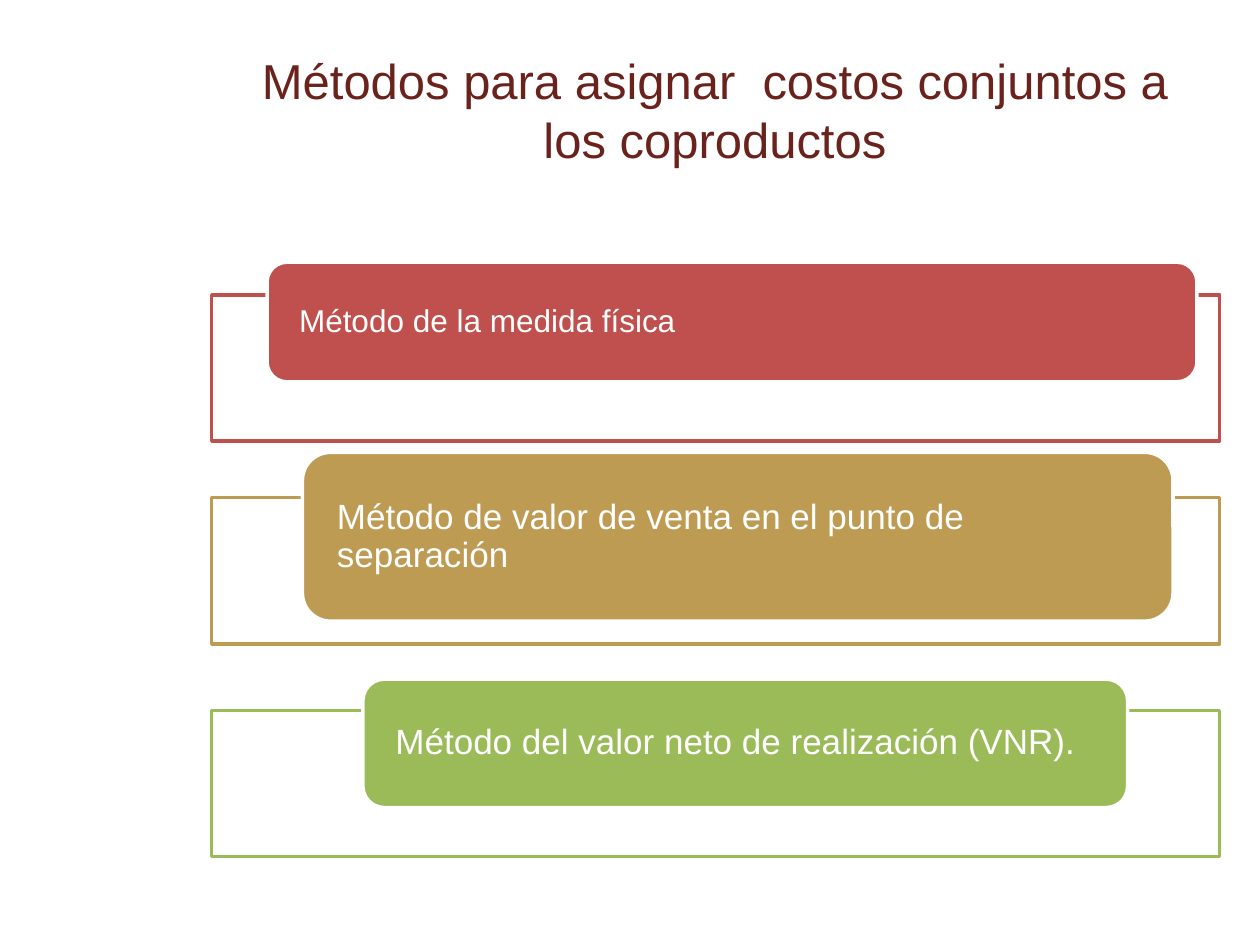
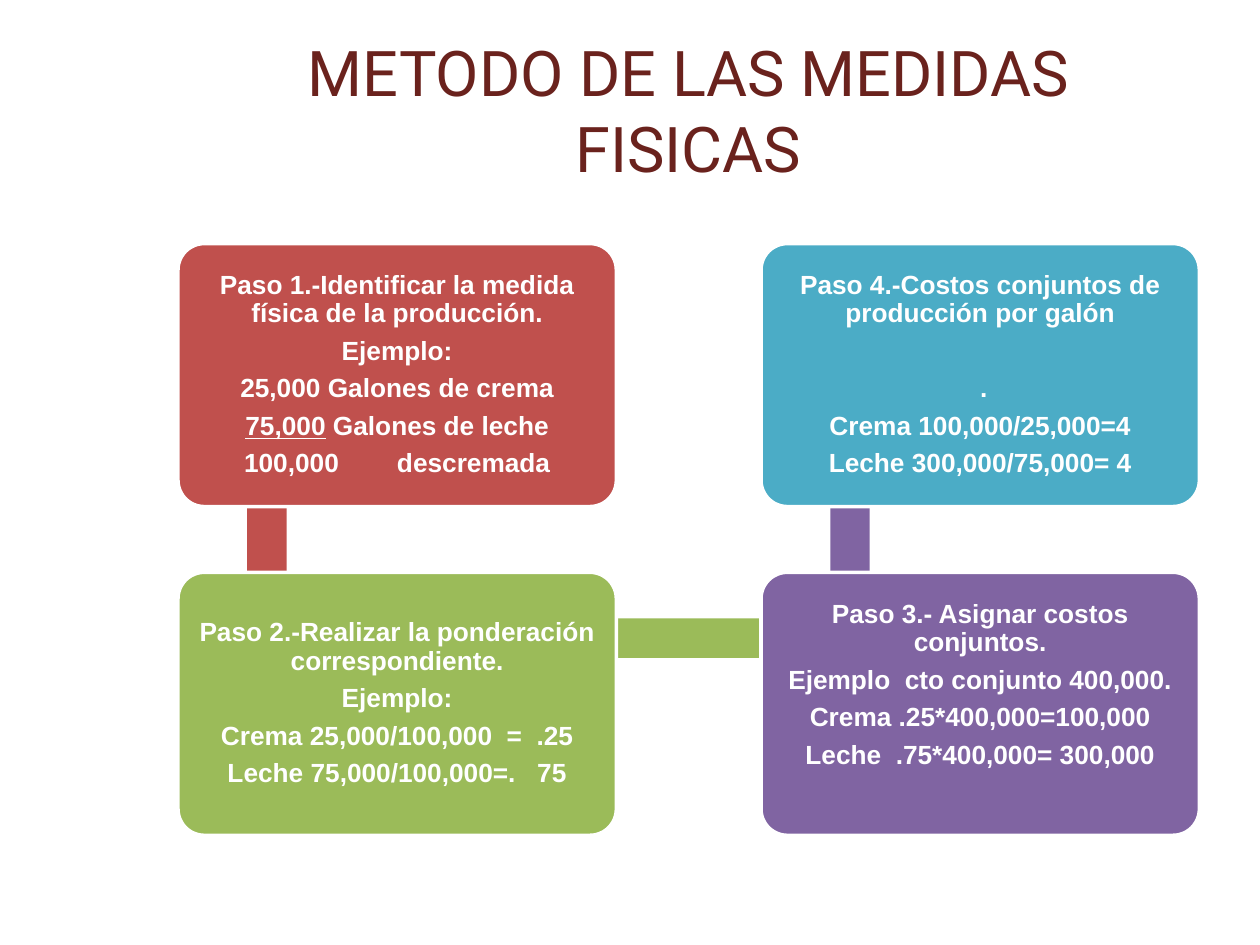
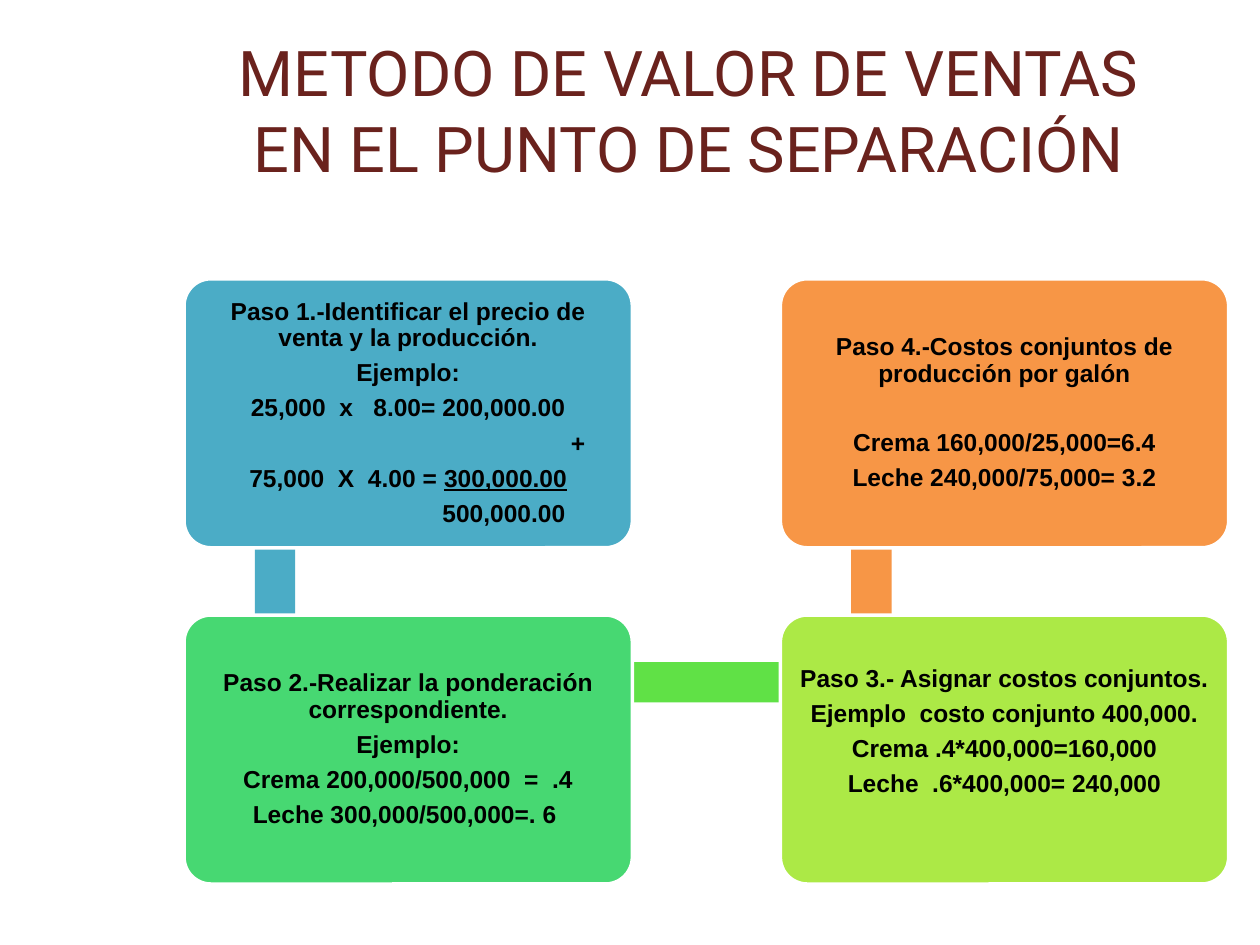
from dataclasses import dataclass

from lxml.etree import SubElement
from pptx import Presentation
from pptx.dml.color import RGBColor
from pptx.enum.shapes import MSO_SHAPE
from pptx.enum.text import MSO_ANCHOR, PP_ALIGN
from pptx.oxml.ns import qn
from pptx.util import Pt


@dataclass(frozen=True)
class Theme:
    title_color: str = "6A221D"
    white: str = "FFFFFF"
    black: str = "000000"
    red: str = "C0504D"
    tan: str = "BD9B53"
    olive: str = "9BBB59"
    purple: str = "8064A2"
    teal: str = "4BACC6"
    orange: str = "F79646"
    green: str = "47D872"
    bright_green: str = "60E146"
    lime: str = "ACE946"
    body_font: str = "Arial"
    heading_font: str = "Roboto"
    list_title_size: float = 28
    heading_size: float = 36
    border: float = 2
    line_spacing: float = 0.9
    space_after: float = 0.35


@dataclass(frozen=True)
class Line:
    text: str
    underlined: str = ""
    skip: bool = False
    indent: float = 0
    tab: float = 0


class Deck:
    def __init__(self, theme):
        self.theme = theme
        self.presentation = Presentation()
        self.presentation.slide_width = Pt(720)
        self.presentation.slide_height = Pt(540)
        self.slide = None

    def new_slide(self):
        self.slide = self.presentation.slides.add_slide(self.presentation.slide_layouts[6])

    def style(self, font, name, size, color, bold=False):
        font.name = name
        font.size = Pt(size)
        font.bold = bold
        font.color.rgb = RGBColor.from_string(color)

    def title(self, text, left, font_name, size, spacing=None):
        box = self.slide.shapes.add_textbox(Pt(left), Pt(17.5), Pt(551), Pt(90))
        frame = box.text_frame
        frame.word_wrap = True
        frame.vertical_anchor = MSO_ANCHOR.MIDDLE
        heading = frame.paragraphs[0]
        heading.text = text
        heading.alignment = PP_ALIGN.CENTER
        if spacing:
            heading.line_spacing = Pt(spacing)
        self.style(heading.font, font_name, size, self.theme.title_color)

    def block(self, preset, left, top, width, height, fill, line=None):
        shape = self.slide.shapes.add_shape(preset, Pt(left), Pt(top), Pt(width), Pt(height))
        shape.shadow.inherit = False
        shape.fill.solid()
        shape.fill.fore_color.rgb = RGBColor.from_string(fill)
        if line:
            shape.line.color.rgb = RGBColor.from_string(line)
            shape.line.width = Pt(self.theme.border)
        else:
            shape.line.fill.background()
        return shape

    def frame(self, top, color):
        outline = self.block(MSO_SHAPE.RECTANGLE, 121, top, 576, 83.5, self.theme.white, color)
        white = outline.fill._xPr.find(qn("a:solidFill"))[0]
        SubElement(white, qn("a:alpha"), val="90000")

    def card(self, left, top, width, height, fill, lines, size, color, insets,
             bold=False, align=PP_ALIGN.CENTER, rounding=None):
        card = self.block(MSO_SHAPE.ROUNDED_RECTANGLE, left, top, width, height,
                          fill, self.theme.white)
        if rounding:
            card.adjustments[0] = rounding
        content = card.text_frame
        content.word_wrap = True
        content.vertical_anchor = MSO_ANCHOR.MIDDLE
        side, above, below = insets
        content.margin_left = content.margin_right = Pt(side)
        content.margin_top, content.margin_bottom = Pt(above), Pt(below)
        for index, line in enumerate(lines):
            paragraph = content.paragraphs[0] if index == 0 else content.add_paragraph()
            self.fill_line(paragraph, line, size, align)
            self.style(paragraph.font, self.theme.body_font, size, color, bold)

    def blank_line(self, size):
        return round(size * 1.42, 2)

    def fill_line(self, paragraph, line, size, align):
        before, marked, after = (line.text.partition(line.underlined)
                                 if line.underlined else (line.text, "", ""))
        for text in filter(None, (before, marked, after)):
            run = paragraph.add_run()
            run.text = text
            if text == marked:
                run.font.underline = True
        paragraph.alignment = PP_ALIGN.LEFT if line.indent else align
        paragraph.line_spacing = self.theme.line_spacing
        paragraph.space_after = Pt(size * self.theme.space_after)
        if line.skip:
            paragraph.space_before = Pt(self.blank_line(size))
        properties = paragraph._p.get_or_add_pPr()
        if line.indent:
            properties.set("marL", str(Pt(line.indent)))
        if line.tab:
            stops = SubElement(properties, qn("a:tabLst"))
            SubElement(stops, qn("a:tab"), pos=str(Pt(line.tab)), algn="l")

    def step_cycle(self, left, top, width, steps, rail_colors, size, color):
        height = width * 0.6
        right, lower = left + width * 1.33, top + width * 0.75
        thickness = width * 0.09
        rail_x, rail_y = width * 0.203, height * 0.25
        across, down = right - left - 1.5, lower - top - 1.5
        places = [(left, top), (left, lower), (right, lower), (right, top)]
        rails = [
            (left + rail_x - thickness / 2, top + rail_y + 0.75, thickness, down),
            (left + rail_x, lower + rail_y - thickness / 2, across, thickness),
            (right + rail_x - thickness / 2, top + rail_y + 0.75, thickness, down),
        ]
        for index, ((x, y), (fill, lines, ends_blank)) in enumerate(zip(places, steps)):
            if index < len(rails):
                self.block(MSO_SHAPE.RECTANGLE, *rails[index], rail_colors[index])
            below = 4.5 + (self.blank_line(size) if ends_blank else 0)
            self.card(x, y, width, height, fill, lines, size, color,
                      (4.5, 4.5, below), bold=True, rounding=0.1)


def methods_slide(deck):
    theme = deck.theme
    deck.new_slide()
    deck.title("Métodos para asignar  costos conjuntos a los coproductos", 133,
               theme.body_font, theme.list_title_size, 33.7)
    methods = [
        (168.5, theme.red, 152.6, 149.8, 531.4, 68.4, 18, "Método de la medida física"),
        (284.4, theme.tan, 172.8, 258.5, 497.5, 96.5, 20,
         "Método de valor de venta en el punto de separación"),
        (406.1, theme.olive, 207.4, 388.1, 437, 73.4, 20,
         "Método del valor neto de realización (VNR)."),
    ]
    for frame_top, color, left, top, width, height, size, method in methods:
        deck.frame(frame_top, color)
        deck.card(left, top, width, height, color, [Line(method)], size, theme.white,
                  (15, 0, 0), align=PP_ALIGN.LEFT)


def physical_measures_slide(deck):
    theme = deck.theme
    deck.new_slide()
    deck.title("METODO DE LAS MEDIDAS FISICAS", 118, theme.heading_font, theme.heading_size)
    steps = [
        (theme.red, [
            Line("Paso 1.-Identificar la medida física de la producción."),
            Line("Ejemplo:"),
            Line("25,000 Galones de crema"),
            Line("75,000 Galones de leche", underlined="75,000"),
            Line("100,000\tdescremada", tab=87.4),
        ], False),
        (theme.olive, [
            Line("Paso 2.-Realizar la ponderación correspondiente."),
            Line("Ejemplo:"),
            Line("Crema 25,000/100,000  =  .25"),
            Line("Leche 75,000/100,000=.   75"),
        ], False),
        (theme.purple, [
            Line("Paso 3.- Asignar costos conjuntos."),
            Line("Ejemplo  cto conjunto 400,000."),
            Line("Crema .25*400,000=100,000"),
            Line("Leche  .75*400,000= 300,000"),
        ], True),
        (theme.teal, [
            Line("Paso 4.-Costos conjuntos de producción por galón"),
            Line(" .", skip=True),
            Line("Crema 100,000/25,000=4"),
            Line("Leche 300,000/75,000= 4"),
        ], False),
    ]
    deck.step_cycle(101.7, 139.2, 250.5, steps, (theme.red, theme.olive, theme.purple),
                    15, theme.white)


def sales_value_slide(deck):
    theme = deck.theme
    deck.new_slide()
    deck.title("METODO DE VALOR DE VENTAS EN EL PUNTO DE SEPARACIÓN", 118,
               theme.heading_font, theme.heading_size)
    steps = [
        (theme.teal, [
            Line("Paso 1.-Identificar el precio de venta y la producción."),
            Line("Ejemplo:"),
            Line("25,000  x   8.00= 200,000.00"),
            Line("+", indent=212),
            Line("75,000  X  4.00 = 300,000.00", underlined="300,000.00"),
            Line("500,000.00", indent=138.7),
        ], False),
        (theme.green, [
            Line("Paso 2.-Realizar la ponderación correspondiente."),
            Line("Ejemplo:"),
            Line("Crema 200,000/500,000  =  .4"),
            Line("Leche 300,000/500,000=. 6 "),
        ], False),
        (theme.lime, [
            Line("Paso 3.- Asignar costos conjuntos."),
            Line("Ejemplo  costo conjunto 400,000."),
            Line("Crema .4*400,000=160,000"),
            Line("Leche  .6*400,000= 240,000"),
        ], True),
        (theme.orange, [
            Line("Paso 4.-Costos conjuntos de producción por galón"),
            Line("Crema 160,000/25,000=6.4", skip=True),
            Line("Leche 240,000/75,000= 3.2"),
        ], False),
    ]
    deck.step_cycle(105.2, 159.3, 256.2, steps,
                    (theme.teal, theme.bright_green, theme.orange), 14, theme.black)


def main():
    deck = Deck(Theme())
    methods_slide(deck)
    physical_measures_slide(deck)
    sales_value_slide(deck)
    deck.presentation.save("out.pptx")


if __name__ == "__main__":
    main()
